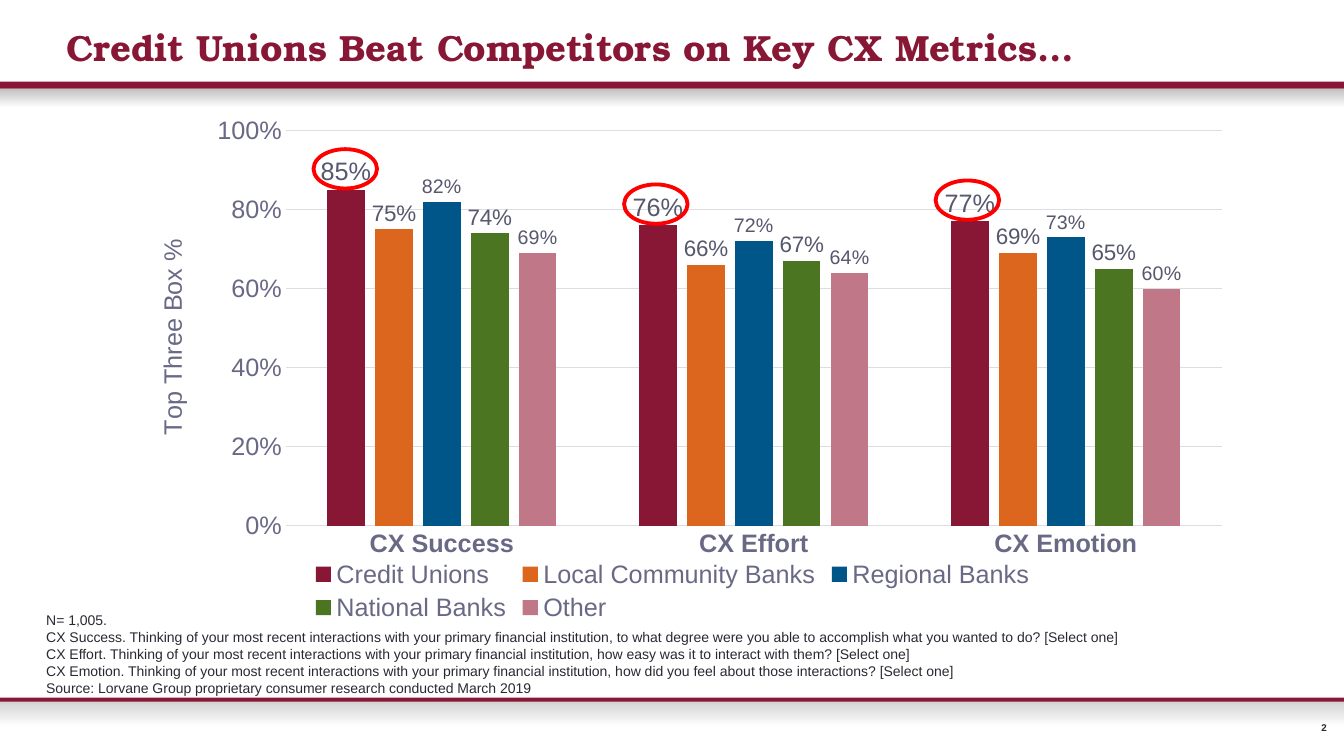
import pptx
import pptx.chart.data
import pptx.dml.color
import pptx.enum.chart
import pptx.enum.shapes
import pptx.enum.text
import pptx.util

Inches = pptx.util.Inches
Pt = pptx.util.Pt
RGBColor = pptx.dml.color.RGBColor
Align = pptx.enum.text.PP_ALIGN
ShapeType = pptx.enum.shapes.MSO_SHAPE

MAROON = RGBColor(0x88, 0x16, 0x35)
ORANGE = RGBColor(0xDC, 0x66, 0x1D)
BLUE = RGBColor(0x00, 0x56, 0x89)
GREEN = RGBColor(0x4B, 0x75, 0x20)
ROSE = RGBColor(0xC0, 0x78, 0x88)
RED = RGBColor(0xFF, 0x00, 0x00)
INK = RGBColor(0x29, 0x29, 0x34)
AXIS_TEXT = RGBColor(0x69, 0x69, 0x86)
LABEL_TEXT = RGBColor(0x57, 0x57, 0x6E)
GRID = RGBColor(0xDC, 0xDC, 0xE3)
SILVER = RGBColor(0xC0, 0xC0, 0xC0)
PALE_SILVER = RGBColor(0xCF, 0xCF, 0xCF)
WHITE = RGBColor(0xFF, 0xFF, 0xFF)

SLIDE_WIDTH = 13.33
BODY_FONT = "Arial"
TITLE_FONT = "TeX Gyre Bonum"

METRICS = ["CX Success", "CX Effort", "CX Emotion"]
# name, values, bar colour, label size
SERIES = [
    ("Credit Unions", (0.85, 0.76, 0.77), MAROON, 18),
    ("Local Community Banks", (0.75, 0.66, 0.69), ORANGE, 16),
    ("Regional Banks", (0.82, 0.72, 0.73), BLUE, 14),
    ("National Banks", (0.74, 0.67, 0.65), GREEN, 16),
    ("Other", (0.69, 0.64, 0.60), ROSE, 14),
]
HIGHLIGHTS = [(3.11, 1.48), (6.19, 1.83), (9.28, 1.79)]
QUESTION_START = ("Thinking of your most recent interactions with your "
                  "primary financial institution, ")
NOTES = [
    "N= 1,005.",
    f"CX Success. {QUESTION_START}to what degree were you able to "
    "accomplish what you wanted to do? [Select one]",
    f"CX Effort. {QUESTION_START}how easy was it to interact with them? [Select one]",
    f"CX Emotion. {QUESTION_START}how did you feel about those interactions? [Select one]",
    "Source: Lorvane Group proprietary consumer research conducted March 2019",
]


def set_font(font, size, color, bold=False, name=BODY_FONT):
    font.name = name
    font.size = Pt(size)
    font.bold = bold
    font.color.rgb = color


def write(paragraph, text, *, size, color=INK, bold=False, name=BODY_FONT,
          align=Align.LEFT):
    paragraph.alignment = align
    run = paragraph.add_run()
    run.text = text
    set_font(run.font, size, color, bold, name)


class SlideBuilder:
    def __init__(self, slide):
        self.slide = slide

    def shape(self, kind, left, top, width, height):
        shape = self.slide.shapes.add_shape(
            kind, Inches(left), Inches(top), Inches(width), Inches(height))
        shape.shadow.inherit = False
        return shape

    def rule(self, top, height):
        """Full-width solid maroon bar."""
        bar = self.shape(ShapeType.RECTANGLE, 0, top, SLIDE_WIDTH, height)
        bar.fill.solid()
        bar.fill.fore_color.rgb = MAROON
        bar.line.fill.background()

    def fade(self, top, height, color):
        """Full-width band that fades downwards to white."""
        band = self.shape(ShapeType.RECTANGLE, 0, top, SLIDE_WIDTH, height)
        band.fill.gradient()
        band.fill.gradient_angle = 270
        for stop, stop_color, position in zip(
                band.fill.gradient_stops, (color, WHITE), (0, 1)):
            stop.color.rgb = stop_color
            stop.position = position
        band.line.fill.background()

    def ring(self, left, top):
        ring = self.shape(ShapeType.OVAL, left, top, 0.63, 0.39)
        ring.fill.background()
        ring.line.color.rgb = RED
        ring.line.width = Pt(2.75)

    def text(self, lines, left, top, width, height, *, middle=False, wrap=True,
             inset=True, **style):
        box = self.slide.shapes.add_textbox(
            Inches(left), Inches(top), Inches(width), Inches(height))
        frame = box.text_frame
        frame.word_wrap = wrap
        if middle:
            frame.vertical_anchor = pptx.enum.text.MSO_ANCHOR.MIDDLE
        if not inset:
            frame.margin_left = frame.margin_right = 0
            frame.margin_top = frame.margin_bottom = 0
        for index, line in enumerate(lines):
            paragraph = frame.add_paragraph() if index else frame.paragraphs[0]
            write(paragraph, line, **style)

    def column_chart(self, left, top, width, height):
        data = pptx.chart.data.CategoryChartData(number_format="0%")
        data.categories = METRICS
        for name, values, _, _ in SERIES:
            data.add_series(name, values)
        chart = self.slide.shapes.add_chart(
            pptx.enum.chart.XL_CHART_TYPE.COLUMN_CLUSTERED, Inches(left),
            Inches(top), Inches(width), Inches(height), data).chart
        set_font(chart.font, 10, INK)
        chart.has_title = False
        chart.has_legend = True
        chart.legend.position = pptx.enum.chart.XL_LEGEND_POSITION.BOTTOM
        chart.legend.include_in_layout = False
        set_font(chart.legend.font, 18, AXIS_TEXT)
        self.style_series(chart.plots[0])
        self.style_axes(chart)
        self.place_plot(chart, x=0.16, y=0.093, w=0.823, h=0.722)

    def style_series(self, plot):
        plot.gap_width = 219
        plot.overlap = -27
        plot.vary_by_categories = False
        for series, (_, _, color, label_size) in zip(plot.series, SERIES):
            series.format.fill.solid()
            series.format.fill.fore_color.rgb = color
            labels = series.data_labels
            labels.show_value = True
            labels.number_format = "0%"
            labels.number_format_is_linked = False
            labels.position = pptx.enum.chart.XL_LABEL_POSITION.OUTSIDE_END
            set_font(labels.font, label_size, LABEL_TEXT)

    def style_axes(self, chart):
        category_axis, value_axis = chart.category_axis, chart.value_axis
        for axis, bold in ((category_axis, True), (value_axis, False)):
            axis.major_tick_mark = pptx.enum.chart.XL_TICK_MARK.NONE
            axis.minor_tick_mark = pptx.enum.chart.XL_TICK_MARK.NONE
            set_font(axis.tick_labels.font, 18, AXIS_TEXT, bold)
        value_axis.minimum_scale = 0
        value_axis.maximum_scale = 1
        value_axis.major_unit = 0.2
        value_axis.tick_labels.number_format = "0%"
        value_axis.tick_labels.number_format_is_linked = False
        value_axis.format.line.fill.background()
        value_axis.has_major_gridlines = True
        for line in (category_axis.format.line,
                     value_axis.major_gridlines.format.line):
            line.color.rgb = GRID
            line.width = Pt(0.75)
        title = value_axis.axis_title.text_frame.paragraphs[0]
        write(title, "Top Three Box %", size=18, color=AXIS_TEXT,
              align=Align.CENTER)

    def place_plot(self, chart, **fractions):
        """Fix the inner plot area as fractions of the chart."""
        plot_area = chart.element.chart.plotArea
        for old in plot_area.findall(pptx.oxml.ns.qn("c:layout")):
            plot_area.remove(old)
        sizes = "".join(f'<c:{key} val="{value}"/>'
                        for key, value in fractions.items())
        plot_area.insert(0, pptx.oxml.parse_xml(
            f'<c:layout {pptx.oxml.ns.nsdecls("c")}><c:manualLayout>'
            '<c:layoutTarget val="inner"/><c:xMode val="edge"/>'
            f'<c:yMode val="edge"/>{sizes}</c:manualLayout></c:layout>'))


def main():
    presentation = pptx.Presentation()
    presentation.slide_width = Inches(SLIDE_WIDTH)
    presentation.slide_height = Inches(7.5)
    builder = SlideBuilder(
        presentation.slides.add_slide(presentation.slide_layouts[6]))

    builder.fade(6.94, 0.27, PALE_SILVER)
    builder.fade(0.88, 0.19, SILVER)
    builder.text(["2"], 13.04, 7.16, 0.12, 0.12, middle=True, wrap=False,
                 inset=False, size=7, bold=True, align=Align.RIGHT)
    builder.rule(6.92, 0.04)
    builder.rule(0.81, 0.07)
    builder.text(["Credit Unions Beat Competitors on Key CX Metrics…"],
                 0.56, 0.2, 12.61, 0.54, middle=True, size=26, color=MAROON,
                 bold=True, name=TITLE_FONT)
    builder.column_chart(1.03, 0.79, 11.28, 5.43)
    builder.text(NOTES, 0.36, 6.02, 11.28, 0.94, size=10)
    for left, top in HIGHLIGHTS:
        builder.ring(left, top)
    presentation.save("out.pptx")


if __name__ == "__main__":
    main()
